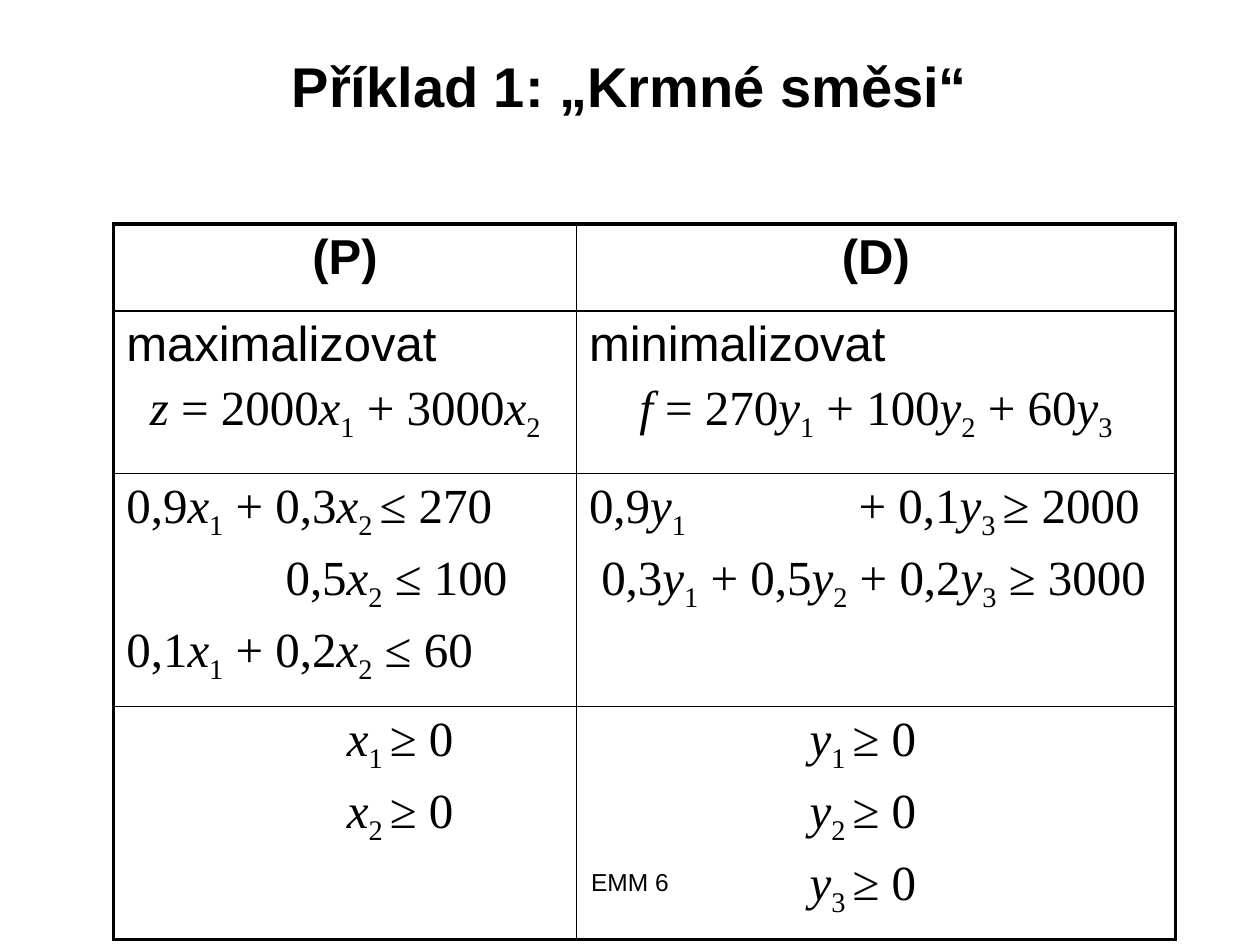
from dataclasses import dataclass
from itertools import groupby

from lxml import etree
from pptx import Presentation
from pptx import util as u
from pptx.dml.color import RGBColor
from pptx.enum import text
from pptx.oxml.ns import qn

BLACK = RGBColor(0, 0, 0)
SANS, SERIF = "Arial", "Times New Roman"
VARIABLES = "xyzf"
CENTER, LEFT = text.PP_ALIGN.CENTER, text.PP_ALIGN.LEFT
THICK, THIN = 2.25, 1


@dataclass
class Line:
    """One line of a cell; in a formula, underscores enclose subscripts."""
    content: str
    formula: bool = True
    bold: bool = False
    align: text.PP_ALIGN = LEFT
    indent: float = 0
    tab: float = 0


def add_text(p, content: str, *, size: float = 28, font: str = SANS, bold: bool = False,
             italic: bool = False, subscript: bool = False) -> None:
    r = p.add_run()
    r.text = content
    f = r.font
    f.size, f.name, f.bold, f.italic = u.Pt(size), font, bold, italic
    f.color.rgb = BLACK
    if subscript:
        r._r.get_or_add_rPr().set("baseline", "-25000")


def add_formula(p, content: str) -> None:
    for i, part in enumerate(content.split("_")):
        for italic, chars in groupby(part, key=lambda c: c in VARIABLES):
            add_text(p, "".join(chars), font=SERIF, italic=italic, subscript=i % 2 == 1)


def fill_cell(cell, lines: list[Line]) -> None:
    tf = cell.text_frame
    for i, line in enumerate(lines):
        p = tf.add_paragraph() if i else tf.paragraphs[0]
        pPr = p._p.get_or_add_pPr()
        if line.indent:
            pPr.set("marL", str(u.Pt(line.indent)))
            pPr.set("indent", "0")
        if line.tab:
            tabs = etree.SubElement(pPr, qn("a:tabLst"))
            etree.SubElement(tabs, qn("a:tab"), pos=str(u.Pt(line.tab)), algn="l")
        p.alignment = line.align
        if i:
            p.space_before = u.Pt(5.6)
        if line.formula:
            add_formula(p, line.content)
        else:
            add_text(p, line.content, bold=line.bold)


def set_borders(cell, widths: dict[str, float]) -> None:
    tcPr = cell._tc.get_or_add_tcPr()
    for i, (side, width) in enumerate(widths.items()):
        ln = etree.Element(qn(f"a:ln{side}"), w=str(u.Pt(width)))
        fill = etree.SubElement(ln, qn("a:solidFill"))
        etree.SubElement(fill, qn("a:srgbClr"), val=str(BLACK))
        tcPr.insert(i, ln)


def header(content: str) -> list[Line]:
    return [Line(content, formula=False, bold=True, align=CENTER)]


def objective(goal: str, function: str) -> list[Line]:
    return [Line(goal, formula=False), Line(function, align=CENTER)]


def nonnegative(variable: str, count: int) -> list[Line]:
    return [Line(f"{variable}_{n} _≥ 0", indent=126) for n in range(1, count + 1)]


# Primal and dual problem, row by row
ROWS = [
    [header("(P)"), header("(D)")],
    [objective("maximalizovat", "z = 2000x_1_ + 3000x_2_"),
     objective("minimalizovat", "f = 270y_1_ + 100y_2_ + 60y_3_")],
    [[Line("0,9x_1_ + 0,3x_2 _≤ 270"),
      Line("0,5x_2_ ≤ 100", indent=91),
      Line("0,1x_1_ + 0,2x_2_ ≤ 60")],
     [Line("0,9y_1_\t+ 0,1y_3 _≥ 2000", tab=154),
      Line("0,3y_1_ + 0,5y_2_ + 0,2y_3_ ≥ 3000", indent=7)]],
    [nonnegative("x", 2), nonnegative("y", 3)],
]
COL_WIDTHS = [264.4, 342.3]
ROW_HEIGHTS = [49.7, 93, 127, 127]


def add_problem_table(s) -> None:
    frame = s.shapes.add_table(len(ROWS), len(COL_WIDTHS), u.Pt(65), u.Pt(128),
                               u.Pt(sum(COL_WIDTHS)), u.Pt(sum(ROW_HEIGHTS)))
    table = frame.table
    table.first_row = table.horz_banding = False
    for col, width in zip(table.columns, COL_WIDTHS):
        col.width = u.Pt(width)
    for row, height in zip(table.rows, ROW_HEIGHTS):
        row.height = u.Pt(height)
    last_row, last_col = len(ROWS) - 1, len(COL_WIDTHS) - 1
    for i, row in enumerate(ROWS):
        for j, lines in enumerate(row):
            cell = table.cell(i, j)
            cell.fill.background()
            fill_cell(cell, lines)
            set_borders(cell, {
                "L": THICK if j == 0 else THIN,
                "R": THICK if j == last_col else THIN,
                "T": THICK if i == 0 else THIN,
                "B": THICK if i == last_row else THIN,
            })


def main() -> None:
    prs = Presentation()
    prs.slide_width, prs.slide_height = u.Pt(720), u.Pt(540)
    s = prs.slides.add_slide(prs.slide_layouts[5])

    # Title
    title = s.shapes.title
    title.left, title.top, title.width, title.height = (u.Pt(v) for v in (36, 21.6, 648, 90))
    tf = title.text_frame
    tf.vertical_anchor = text.MSO_ANCHOR.TOP
    tf.margin_top = u.Pt(8)
    p = tf.paragraphs[0]
    p.alignment = CENTER
    add_text(p, "Příklad 1: „Krmné směsi“", size=32, bold=True)

    # Footer
    sp = s.shapes.add_textbox(u.Pt(246), u.Pt(492), u.Pt(228), u.Pt(37.5))
    sp.text_frame.word_wrap = True
    p = sp.text_frame.paragraphs[0]
    p.alignment = CENTER
    add_text(p, "EMM 6", size=14)

    add_problem_table(s)
    prs.save("out.pptx")


if __name__ == "__main__":
    main()
